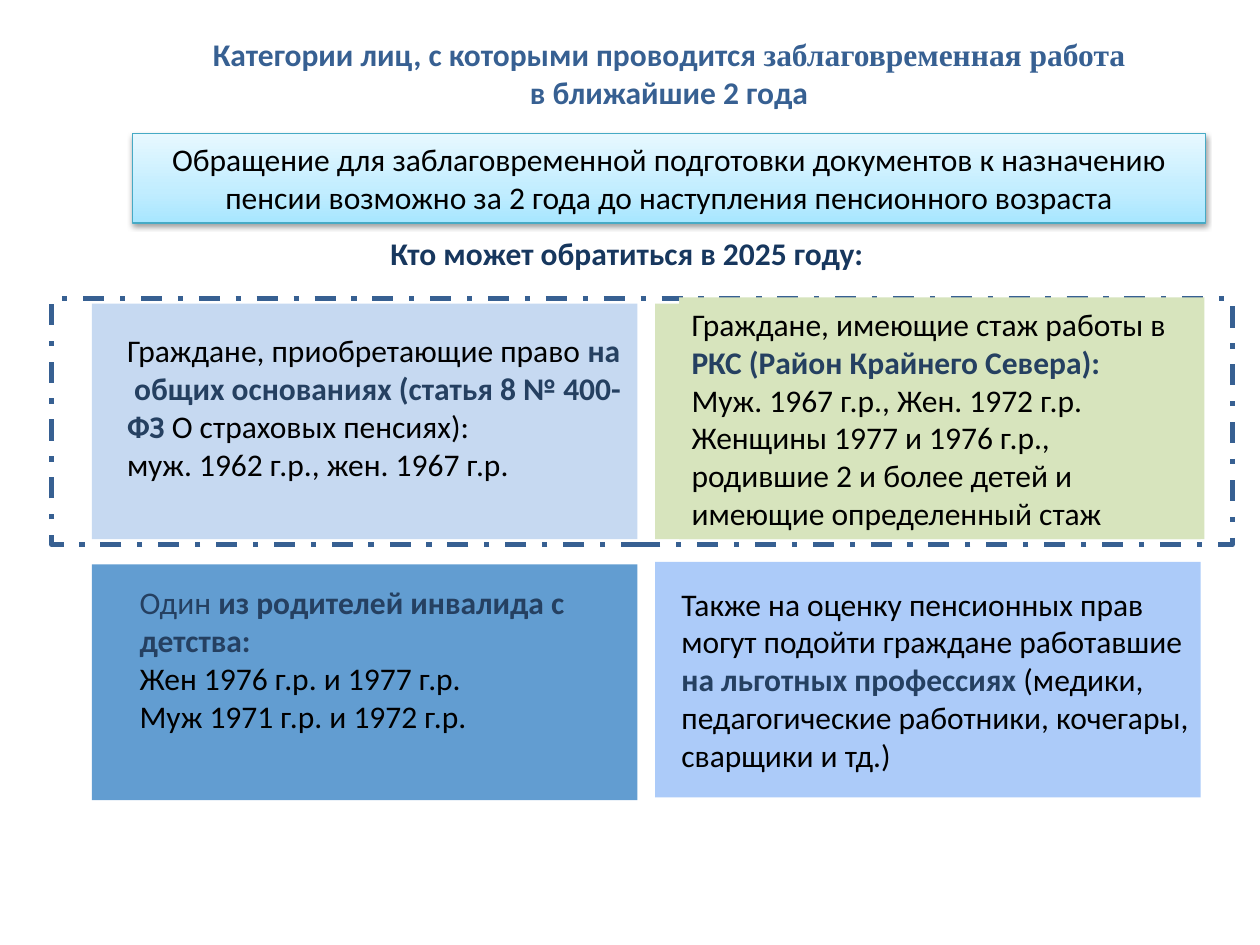
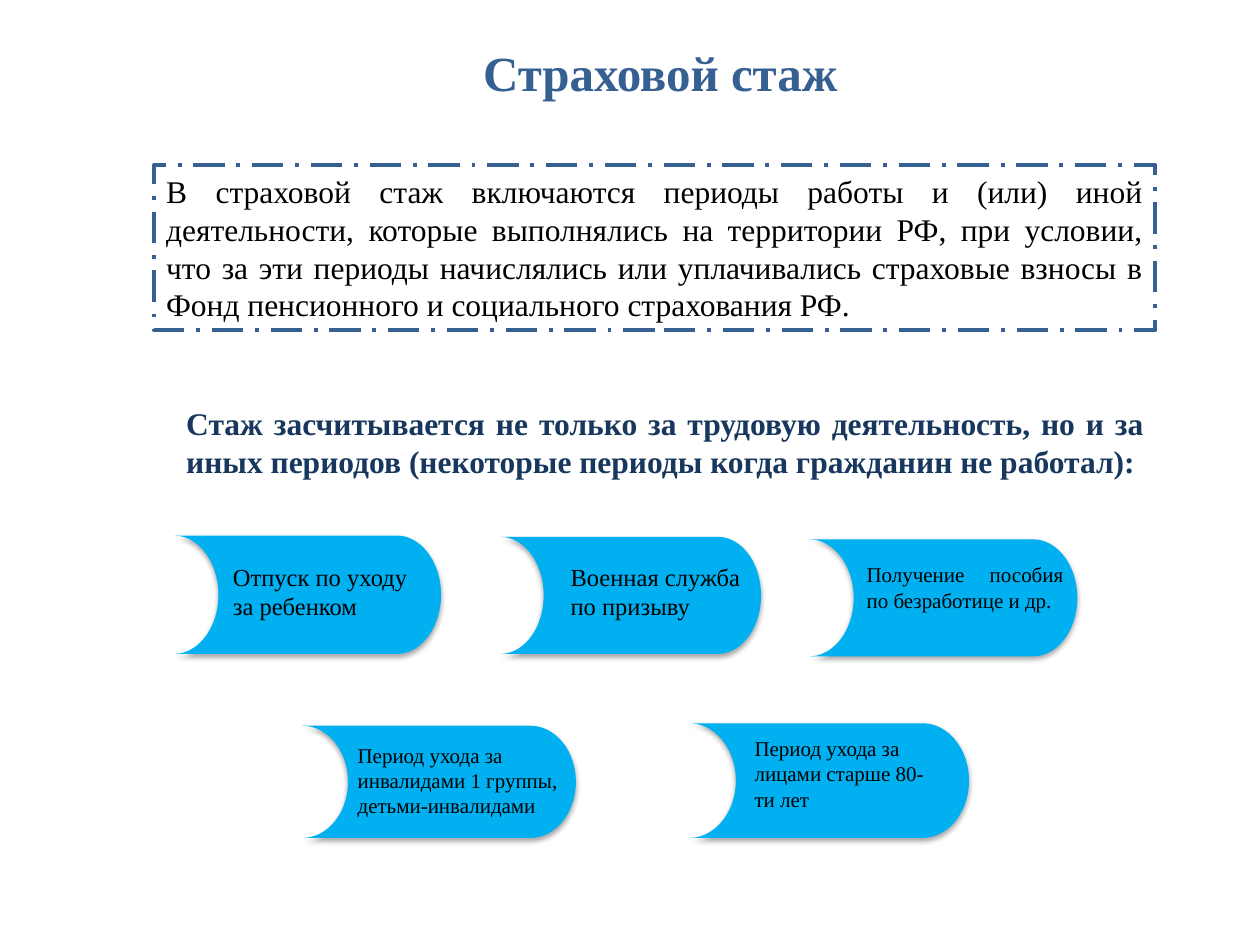
from lxml import etree
from pptx import Presentation
from pptx.dml.color import RGBColor
from pptx.enum.dml import MSO_LINE
from pptx.enum.shapes import MSO_SHAPE
from pptx.enum.text import MSO_ANCHOR, MSO_AUTO_SIZE, PP_ALIGN
from pptx.oxml.ns import qn
from pptx.util import Inches, Pt

RECTANGLE = MSO_SHAPE.RECTANGLE
STORAGE = MSO_SHAPE.FLOWCHART_STORED_DATA
DASH_DOT, LONG_DASH_DOT = MSO_LINE.DASH_DOT, MSO_LINE.LONG_DASH_DOT
LEFT, CENTER, JUSTIFY = PP_ALIGN.LEFT, PP_ALIGN.CENTER, PP_ALIGN.JUSTIFY

SANS, SERIF = "Calibri", "Times New Roman"
BLACK = RGBColor(0x00, 0x00, 0x00)
TITLE_BLUE = RGBColor(0x37, 0x60, 0x92)
HEADING_BLUE = RGBColor(0x17, 0x37, 0x5E)
ACCENT_BLUE = RGBColor(0x25, 0x40, 0x61)
PALE_BLUE = RGBColor(0xC6, 0xD9, 0xF1)
PALE_GREEN = RGBColor(0xD7, 0xE4, 0xBD)
MID_BLUE = RGBColor(0x62, 0x9D, 0xD1)
SOFT_BLUE = RGBColor(0xAC, 0xCB, 0xF9)
PILL_BLUE = RGBColor(0x00, 0xB0, 0xF0)
BAND_LINE = RGBColor(0x46, 0xAA, 0xC5)
BAND_STOPS = [(0, RGBColor(0xA7, 0xE6, 0xFF)), (35, RGBColor(0xC1, 0xED, 0xFF)),
              (100, RGBColor(0xE7, 0xF8, 0xFF))]

STRONG = {"bold": True, "color": ACCENT_BLUE}


def write_text(shape, paras, size=18, font=SANS, color=BLACK, bold=False, align=LEFT):
    """Each paragraph is a string or a list of strings and (string, format) pairs."""
    frame = shape.text_frame
    frame.word_wrap = True
    frame.auto_size = MSO_AUTO_SIZE.SHAPE_TO_FIT_TEXT
    for index, spans in enumerate(paras):
        para = frame.add_paragraph() if index else frame.paragraphs[0]
        para.alignment = align
        for part in [spans] if isinstance(spans, str) else spans:
            text, own = (part, {}) if isinstance(part, str) else part
            span = para.add_run()
            span.text = text
            span.font.size = Pt(size)
            span.font.name = own.get("font", font)
            span.font.bold = own.get("bold", bold)
            span.font.color.rgb = own.get("color", color)


def add_text(slide, box, paras, **text_format):
    label = slide.shapes.add_textbox(*map(Inches, box))
    write_text(label, paras, **text_format)


def add_block(slide, box, kind=RECTANGLE, fill=None, line=None, width=1, dash=None):
    block = slide.shapes.add_shape(kind, *map(Inches, box))
    block.shadow.inherit = False
    block.text_frame.vertical_anchor = MSO_ANCHOR.MIDDLE
    if fill is None:
        block.fill.background()
    else:
        block.fill.solid()
        block.fill.fore_color.rgb = fill
    if line is None:
        block.line.fill.background()
    else:
        block.line.color.rgb = line
        block.line.width = Pt(width)
        if dash is not None:
            block.line.dash_style = dash
    return block


def add_color(parent, color):
    return etree.SubElement(parent, qn("a:srgbClr"), val=str(color))


def add_shadow(shape, opacity, distance):
    effects = shape._element.spPr.find(qn("a:effectLst"))
    shadow = etree.SubElement(effects, qn("a:outerShdw"), blurRad=str(Pt(3.1)),
                              dist=str(Pt(distance)), dir="5400000", rotWithShape="0")
    etree.SubElement(add_color(shadow, BLACK), qn("a:alpha"), val=str(opacity * 1000))


def set_gradient(shape, stops):
    shape.fill.gradient()
    shape.fill.gradient_angle = 90
    stop_list = shape._element.spPr.find(qn("a:gradFill")).find(qn("a:gsLst"))
    for old in list(stop_list):
        stop_list.remove(old)
    for position, color in stops:
        stop = etree.SubElement(stop_list, qn("a:gs"), pos=str(position * 1000))
        add_color(stop, color)


def add_title(slide, box, spans, **text_format):
    add_text(slide, box, [spans], color=TITLE_BLUE, bold=True, align=CENTER, **text_format)


def inner(box, inset):
    """Turn an inset (dx, dy, width, height) into a place on the slide."""
    return box[0] + inset[0], box[1] + inset[1], inset[2], inset[3]


def add_notice_band(slide, box, text):
    band = add_block(slide, box, line=BAND_LINE, width=0.75)
    set_gradient(band, BAND_STOPS)
    add_shadow(band, 38, 1.6)
    write_text(band, [text], align=CENTER)


def add_category(slide, box, fill, inset, paras, label_fill=None):
    add_block(slide, box, fill=fill)
    place = inner(box, inset)
    if label_fill is None:
        add_text(slide, place, paras)
    else:
        write_text(add_block(slide, place, fill=label_fill), paras)


def add_pill(slide, box, inset, text, size, align=LEFT):
    pill = add_block(slide, box, kind=STORAGE, fill=PILL_BLUE)
    pill.rotation = 180
    add_shadow(pill, 35, 1.8)
    add_text(slide, inner(box, inset), [text], size=size, font=SERIF, align=align)


def build_categories(slide):
    add_block(slide, (0.41, 2.37, 9.37, 1.95), line=TITLE_BLUE, width=3, dash=DASH_DOT)
    add_title(slide, (1.57, 0.23, 7.48, 0.71), [
        "Категории лиц, с которыми проводится ",
        ("заблаговременная работа ", {"font": SERIF}),
        "в ближайшие 2 года"])
    add_notice_band(slide, (1.05, 1.06, 8.52, 0.71),
                    "Обращение для заблаговременной подготовки документов к назначению "
                    "пенсии возможно за 2 года до наступления пенсионного возраста")
    add_text(slide, (3, 1.81, 7.64, 0.4), ["Кто может обратиться в 2025 году:"],
             color=HEADING_BLUE, bold=True)

    # Four category cards
    left, right, width, height = 0.73, 5.2, 4.33, 1.87
    add_category(slide, (left, 2.41, width, height), PALE_BLUE, (0.18, 0.17, 4.18, 1.31), [
        ["Граждане, приобретающие право ", ("на", STRONG)],
        [(" общих основаниях (статья 8 № 400-ФЗ ", STRONG), "О страховых пенсиях):"],
        "муж. 1962 г.р., жен. 1967 г.р."])
    add_category(slide, (right, 2.41, width, height), PALE_GREEN, (0.19, -0.05, 4.17, 1.92), [
        ["Граждане, имеющие стаж работы в ", ("РКС (Район Крайнего Севера):", STRONG)],
        "Муж. 1967 г.р., Жен. 1972 г.р.",
        "Женщины 1977 и 1976 г.р., родившие 2 и более детей и имеющие определенный стаж",
    ], label_fill=PALE_GREEN)
    add_category(slide, (left, 4.48, width, height), MID_BLUE, (0.28, 0.1, 3.77, 1.31), [
        [("Один ", {"color": ACCENT_BLUE}), ("из родителей инвалида с детства:", STRONG)],
        "Жен 1976 г.р. и 1977 г.р.",
        "Муж 1971 г.р. и 1972 г.р."])
    add_category(slide, (right, 4.46, width, height), SOFT_BLUE, (0.11, 0.13, 4.33, 1.62), [
        ["Также на оценку пенсионных прав могут подойти граждане работавшие ",
         ("на льготных профессиях ", STRONG),
         "(медики, педагогические работники, кочегары, сварщики и тд.)"]])


def build_insurance_record(slide):
    add_title(slide, (1.47, 0.29, 7.54, 0.57), "Страховой стаж", size=28, font=SERIF)
    definition = add_block(slide, (1.22, 1.31, 7.95, 1.31), line=TITLE_BLUE, width=2.25,
                           dash=LONG_DASH_DOT)
    write_text(definition, [
        "В страховой стаж включаются периоды работы и (или) иной деятельности, которые "
        "выполнялись на территории РФ, при условии, что за эти периоды начислялись или "
        "уплачивались страховые взносы в Фонд пенсионного и социального страхования РФ."],
        font=SERIF, align=JUSTIFY)
    add_text(slide, (1.38, 3.16, 7.8, 0.71), [
        "Стаж засчитывается не только за трудовую деятельность, но и за иных периодов "
        "(некоторые периоды когда гражданин не работал):"],
        font=SERIF, color=HEADING_BLUE, bold=True, align=JUSTIFY)

    # Periods that count: three above, two below
    add_pill(slide, (1.38, 4.25, 2.12, 0.94), (0.37, 0.16, 1.7, 0.57),
             "Отпуск по уходу за ребенком", 14)
    add_pill(slide, (3.97, 4.26, 2.07, 0.93), (0.46, 0.15, 1.61, 0.57),
             "Военная служба по призыву", 14)
    add_pill(slide, (6.42, 4.28, 2.13, 0.93), (0.36, 0.13, 1.76, 0.71),
             "Получение пособия по безработице и др.", 12, align=JUSTIFY)
    add_pill(slide, (2.4, 5.76, 2.17, 0.89), (0.34, 0.08, 1.97, 0.71),
             "Период ухода за инвалидами 1 группы, детьми-инвалидами", 12)
    add_pill(slide, (5.47, 5.74, 2.22, 0.91), (0.42, 0.05, 1.61, 0.71),
             "Период ухода за лицами старше 80-ти лет", 12)


def main():
    deck = Presentation()
    deck.slide_width, deck.slide_height = Inches(10), Inches(7.5)
    for build_page in (build_categories, build_insurance_record):
        build_page(deck.slides.add_slide(deck.slide_layouts[6]))
    deck.save("out.pptx")


if __name__ == "__main__":
    main()
